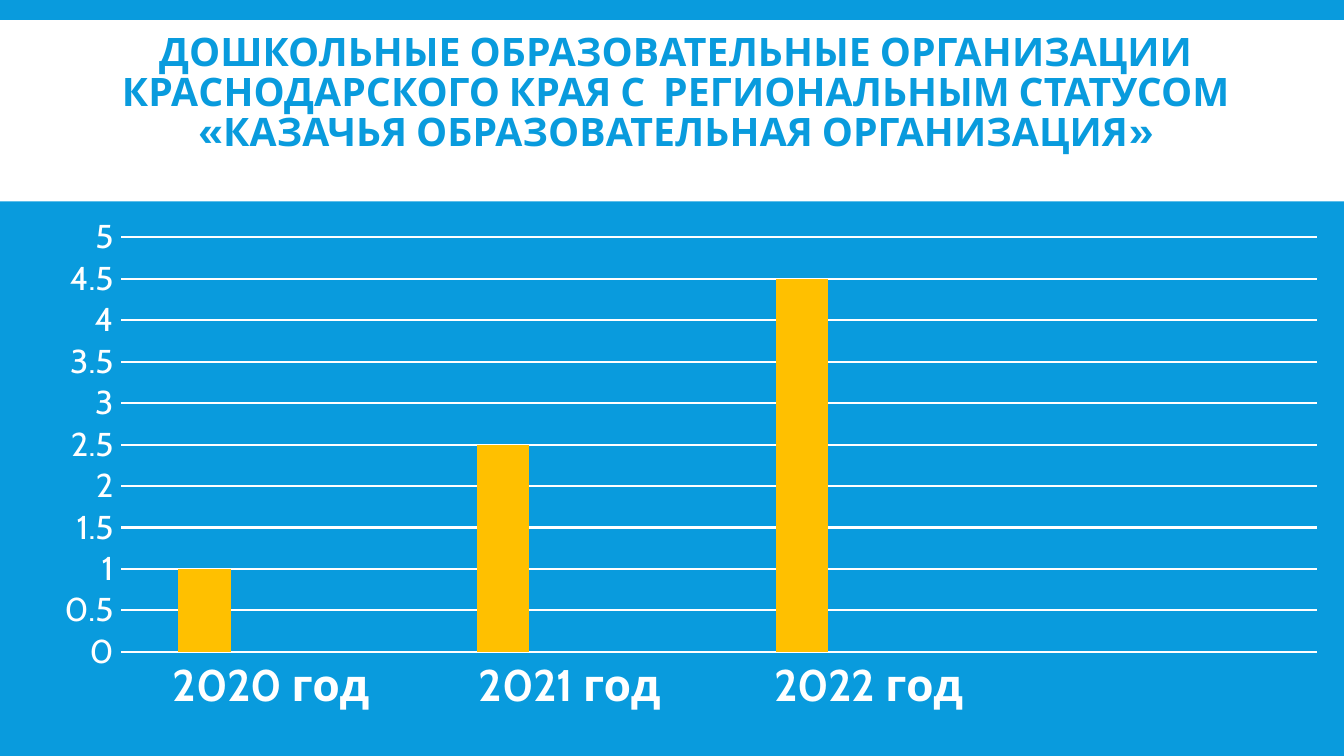
from lxml import etree
from pptx import Presentation
from pptx.chart.data import CategoryChartData
from pptx.dml.color import RGBColor
from pptx.enum.chart import XL_CHART_TYPE as ChartType, XL_TICK_MARK as Tick
from pptx.enum.shapes import MSO_SHAPE as Shape
from pptx.enum.text import MSO_ANCHOR as Anchor, PP_ALIGN as Align
from pptx.oxml.ns import qn
from pptx.util import Pt

PX = 4572  # 200 px to the inch
BLUE, WHITE = "099BDD", "FFFFFF"


def color(value):
    return RGBColor.from_string(value)


class SlideBuilder:
    font = "Cabin"

    def __init__(self, prs):
        self.slide = prs.slides.add_slide(prs.slide_layouts[6])

    def box(self, *lengths):
        return [length * PX for length in lengths]

    def background(self, fill):
        back = self.slide.background.fill
        back.solid()
        back.fore_color.rgb = color(fill)

    def style(self, font, size, tint, bold=False):
        font.name = self.font
        font.size = Pt(size)
        font.bold = bold
        font.color.rgb = color(tint)

    def band(self, x, y, w, h, fill):
        band = self.slide.shapes.add_shape(Shape.RECTANGLE, *self.box(x, y, w, h))
        band.shadow.inherit = False
        band.fill.solid()
        band.fill.fore_color.rgb = color(fill)
        band.line.fill.background()

    def title(self, x, y, w, h, lines, size, tint):
        frame = self.slide.shapes.add_textbox(*self.box(x, y, w, h)).text_frame
        frame.word_wrap = True
        frame.vertical_anchor = Anchor.TOP
        frame.margin_left = frame.margin_right = 10 * PX
        frame.margin_top = frame.margin_bottom = 2 * PX
        frame.text = "\n".join(lines)
        for paragraph in frame.paragraphs:
            paragraph.alignment = Align.CENTER
            paragraph.line_spacing = 0.85
            for run in paragraph.runs:
                self.style(run.font, size, tint, bold=True)

    def column_chart(self, x, y, w, h, categories, series, plot_area):
        data = CategoryChartData()
        data.categories = categories
        for name, values, _ in series:
            data.add_series(name, values)
        chart = self.slide.shapes.add_chart(
            ChartType.COLUMN_CLUSTERED, *self.box(x, y, w, h), data).chart
        chart.has_title = chart.has_legend = False
        self.style(chart.font, 10, WHITE)

        # Columns
        plot = chart.plots[0]
        plot.gap_width, plot.overlap = 219, -27
        plot.vary_by_categories = False
        for column, (_, _, fill) in zip(plot.series, series):
            column.format.fill.solid()
            column.format.fill.fore_color.rgb = color(fill)

        # Axes and gridlines
        years, counts = chart.category_axis, chart.value_axis
        for axis, size, bold in ((years, 16, True), (counts, 12, False)):
            axis.major_tick_mark = axis.minor_tick_mark = Tick.NONE
            self.style(axis.tick_labels.font, size, WHITE, bold)
        counts.minimum_scale, counts.maximum_scale, counts.major_unit = 0, 5, 0.5
        counts.has_major_gridlines = True
        counts.format.line.fill.background()
        for line in (years.format.line, counts.major_gridlines.format.line):
            line.color.rgb = color(WHITE)
            line.width = Pt(0.75)
        self.place_plot(chart, plot_area)

    def place_plot(self, chart, plot_area):
        area = chart.plots[0]._element.getparent()
        for old in area.findall(qn("c:layout")):
            area.remove(old)
        layout = etree.Element(qn("c:layout"))
        area.insert(0, layout)
        manual = etree.SubElement(layout, qn("c:manualLayout"))
        settings = [("layoutTarget", "inner"), ("xMode", "edge"), ("yMode", "edge")]
        for tag, value in settings + list(zip("xywh", plot_area)):
            etree.SubElement(manual, qn("c:" + tag)).set("val", str(value))


def main():
    prs = Presentation()
    prs.slide_width, prs.slide_height = 1334 * PX, 750 * PX
    builder = SlideBuilder(prs)
    builder.background(BLUE)

    # Heading
    builder.band(0, 20, 1334, 180, WHITE)
    builder.title(34, 32, 1274, 164, [
        "ДОШКОЛЬНЫЕ ОБРАЗОВАТЕЛЬНЫЕ ОРГАНИЗАЦИИ КРАСНОДАРСКОГО КРАЯ С  РЕГИОНАЛЬНЫМ СТАТУСОМ",
        "«КАЗАЧЬЯ ОБРАЗОВАТЕЛЬНАЯ ОРГАНИЗАЦИЯ»",
    ], 14, BLUE)

    # Organisations by year; the fourth group and two series stay empty
    empty = [None] * 4
    builder.column_chart(
        64, 216, 1244, 490,
        ["2020 год", "2021 год", "2022 год", ""],
        [("Series 1", [1, 2.5, 4.5, None], "FFC000"),
         ("Series 2", empty, "A5D028"),
         ("Series 3", empty, "08CC78")],
        plot_area=(0.045, 0.04, 0.955, 0.85))

    prs.save("out.pptx")


if __name__ == "__main__":
    main()
